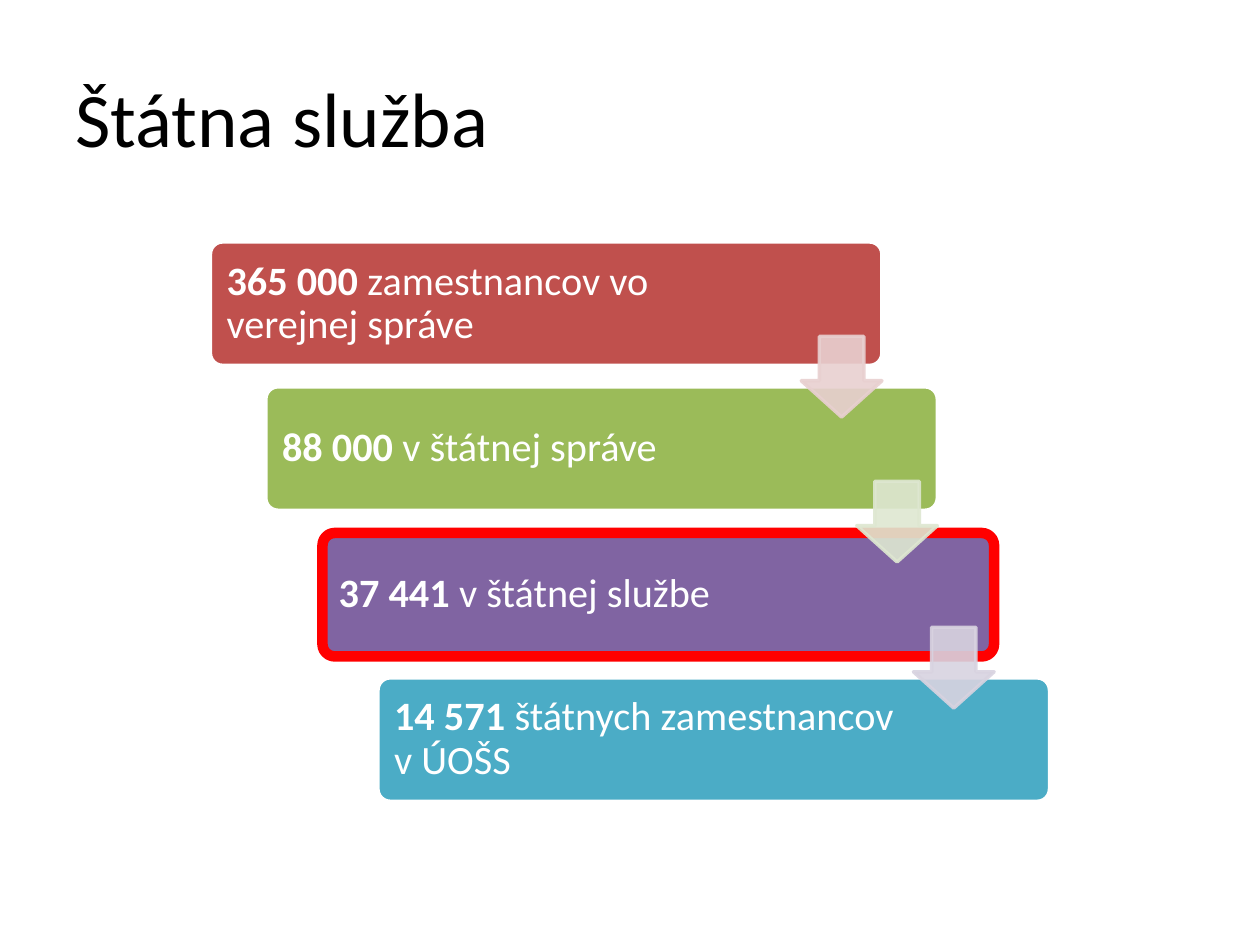
from lxml import etree
from pptx import Presentation
from pptx.dml.color import RGBColor
from pptx.enum.shapes import MSO_SHAPE
from pptx.enum.text import MSO_ANCHOR
from pptx.oxml.ns import qn
from pptx.util import Pt

BAR = MSO_SHAPE.ROUNDED_RECTANGLE
ARROW = MSO_SHAPE.DOWN_ARROW
MIDDLE = MSO_ANCHOR.MIDDLE
PX = 9144  # EMU per px, 100 px to the inch
FONT = "Calibri"
WHITE, BLACK, RED = "FFFFFF", "000000", "FF0000"


def rgb(color):
    return RGBColor.from_string(color)


class Deck:
    """Holds the style and the current slide."""

    def __init__(self, width, height):
        self.prs = Presentation()
        self.prs.slide_width, self.prs.slide_height = width * PX, height * PX
        self.s = self.prs.slides.add_slide(self.prs.slide_layouts[6])

    def shape(self, kind, box, adjustments, fill, line, line_pt, alpha=100):
        sp = self.s.shapes.add_shape(kind, *(v * PX for v in box))
        sp.shadow.inherit = False
        for i, value in enumerate(adjustments):
            sp.adjustments[i] = value
        sp.fill.solid()
        sp.fill.fore_color.rgb = rgb(fill)
        sp.line.color.rgb = rgb(line)
        sp.line.width = Pt(line_pt)
        if alpha < 100:
            for clr in sp.element.spPr.iter(qn("a:srgbClr")):
                etree.SubElement(clr, qn("a:alpha")).set("val", str(alpha * 1000))

    def text(self, box, runs, size, color, inset=(10, 10), spacing=1.0):
        """runs is a list of (text, bold) pairs."""
        tf = self.s.shapes.add_textbox(*(v * PX for v in box)).text_frame
        tf.word_wrap = True
        tf.vertical_anchor = MIDDLE
        tf.margin_left = tf.margin_right = inset[0] * PX
        tf.margin_top = tf.margin_bottom = inset[1] * PX
        p = tf.paragraphs[0]
        p.line_spacing = spacing
        for words, bold in runs:
            r = p.add_run()
            r.text = words
            r.font.name, r.font.size, r.font.bold = FONT, Pt(size), bold
            r.font.color.rgb = rgb(color)


# Count, description, bar colour, border, border width, colour of the arrow below
STEPS = [
    ("365 000 ", "zamestnancov vo verejnej správe", "C0504D", WHITE, 2, "E8D0D0"),
    ("88 000 ", "v štátnej správe", "9BBB59", WHITE, 2, "DEE7D1"),
    ("37 441 ", "v štátnej službe", "8064A2", RED, 6, "D8D3E0"),
    ("14 571 ", "štátnych zamestnancov v ÚOŠS", "4BACC6", WHITE, 2, None),
]


def main():
    deck = Deck(1000, 750)

    # Title
    deck.text((50, 30, 900, 125), [("Štátna služba", False)], 44, BLACK, (10, 5))

    # Bars, evenly stepped down to the right
    last = len(STEPS) - 1
    corners = [(167 + round(i * 133 / last), 192 + round(i * 346 / last))
               for i in range(len(STEPS))]
    for (x, y), (count, label, fill, line, line_pt, _) in zip(corners, STEPS):
        deck.shape(BAR, (x, y, 533, 98), [0.1], fill, line, line_pt)
        deck.text((x + 3, y + 3, 420, 92), [(count, True), (label, False)],
                  23, WHITE, spacing=0.9)

    # Arrows from each bar to the next
    for (x, y), step in zip(corners[:-1], STEPS):
        tint = step[-1]
        deck.shape(ARROW, (x + 469, y + 75, 64, 64), [0.55, 0.45],
                   tint, tint, 2, alpha=90)

    deck.prs.save("out.pptx")


if __name__ == "__main__":
    main()
